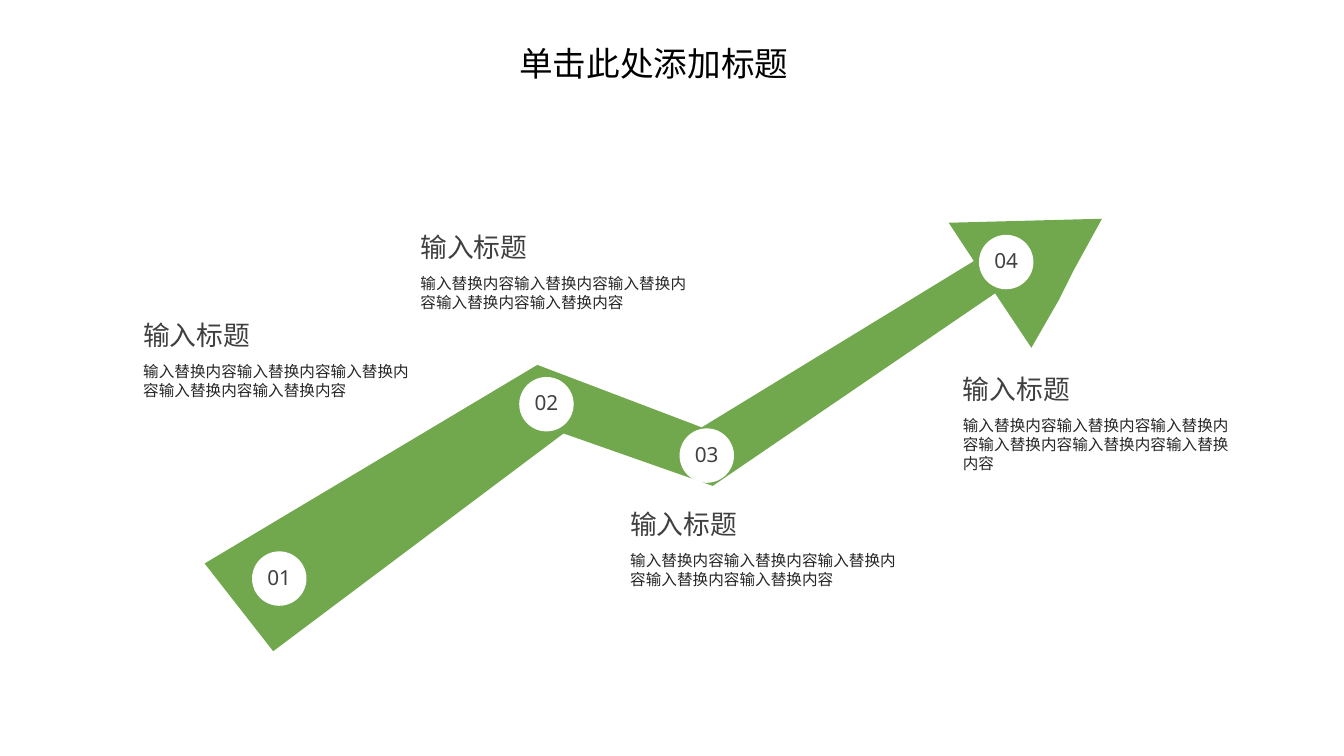
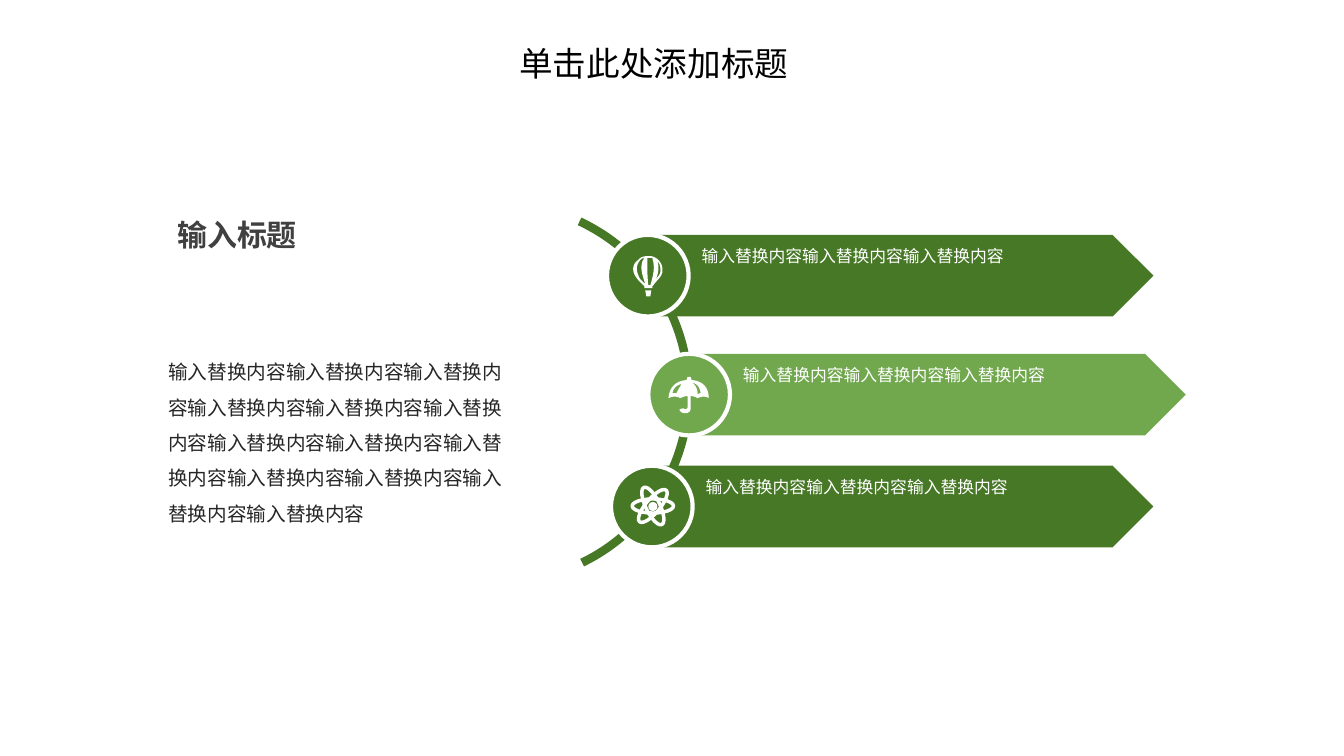
import pptx
import pptx.util
import pptx.dml.color
import pptx.enum.shapes
import pptx.enum.text
from dataclasses import dataclass
from typing import Any, NamedTuple

PX = 9144
KIND = pptx.enum.shapes.MSO_SHAPE
ALIGN = pptx.enum.text.PP_ALIGN
MID = pptx.enum.text.MSO_ANCHOR.MIDDLE
TOP = pptx.enum.text.MSO_ANCHOR.TOP
Path = list[tuple[int, ...]]


@dataclass(frozen=True)
class Theme:
    font: str = "Noto Sans"
    black: str = "000000"
    white: str = "FFFFFF"
    head: str = "404040"
    body: str = "262626"
    dark: str = "477826"
    light: str = "71A84E"
    title_pt: float = 24
    lead_pt: float = 21.4
    head_pt: float = 19.1
    mark_pt: float = 14.8
    text_pt: float = 14
    row_pt: float = 12
    note_pt: float = 11.1


LOOK = Theme()


class Box(NamedTuple):
    left: int
    top: int
    width: int
    height: int


class Style(NamedTuple):
    size: float
    tint: str
    align: Any = ALIGN.LEFT
    anchor: Any = TOP
    pad: tuple[int, int] = (10, 5)
    lead: float = 1.0
    bold: bool = False


@dataclass(frozen=True)
class Note:
    left: int
    top: int
    count: int


@dataclass(frozen=True)
class Row:
    plate: int
    badge: int
    top: int
    tint: str
    icon: list[Path]


TITLE = "单击此处添加标题"
HEAD = "输入标题"
PHRASE = "输入替换内容"

TITLE_STYLE = Style(LOOK.title_pt, LOOK.black, ALIGN.CENTER, MID)
HEAD_STYLE = Style(LOOK.head_pt, LOOK.head, anchor=MID, pad=(0, 5), lead=0.9)
NOTE_STYLE = Style(LOOK.note_pt, LOOK.body, pad=(0, 0))
MARK_STYLE = Style(LOOK.mark_pt, LOOK.head, ALIGN.CENTER, MID, (0, 0), 0.9)
ROW_STYLE = Style(LOOK.row_pt, LOOK.white)
TEXT_STYLE = Style(LOOK.text_pt, LOOK.body, lead=1.5)
LEAD_STYLE = Style(LOOK.lead_pt, LOOK.head, bold=True)

TREND: Path = [
    (941, 221), (966, 259), (696, 424), (533, 362), (203, 559), (271, 646),
    (559, 430), (707, 482), (987, 291), (1023, 345), (1050, 298),
    (1065, 268), (1093, 217),
]
MARKS = [(250, 547), (515, 374), (674, 425), (971, 233)]
NOTES = [Note(142, 317, 5), Note(417, 230, 5), Note(625, 505, 5), Note(955, 371, 6)]

BALLOON: list[Path] = [
    [(643, 254), (647, 254, 650, 255, 653, 258), (655, 260, 657, 263, 657, 267),
     (657, 270), (657, 271, 656, 272, 656, 273), (655, 275, 650, 280, 648, 283),
     (647, 284), (647, 286), (639, 286), (639, 284), (637, 282),
     (633, 278, 628, 273, 628, 267), (628, 263, 630, 260, 633, 258),
     (635, 255, 639, 254, 643, 254)],
    [(646, 288), (645, 294), (641, 294), (640, 288)],
    [(643, 283), (645, 283), (648, 273, 650, 265, 647, 256),
     (646, 256, 644, 256, 643, 256), (642, 256), (642, 265, 642, 274, 643, 283)],
    [(635, 258), (630, 264, 631, 270, 635, 277), (636, 278, 637, 279, 638, 280),
     (640, 282), (638, 275, 633, 264, 639, 256), (637, 256, 636, 257, 635, 258)],
    [(652, 259), (654, 265, 653, 272, 650, 278), (652, 275, 654, 273, 654, 272),
     (655, 271, 655, 270, 655, 267), (655, 264, 654, 261, 652, 259)],
]
BROLLY: list[Path] = [
    [(678, 405), (678, 406, 679, 406, 680, 406), (681, 406, 682, 405, 682, 404),
     (682, 393), (679, 393, 677, 394, 675, 395), (671, 393, 667, 393, 663, 395),
     (664, 384, 670, 378, 681, 377), (682, 374), (685, 374), (686, 377),
     (697, 378, 703, 384, 703, 395), (700, 393, 696, 393, 692, 395),
     (690, 394, 688, 393, 685, 393), (685, 404), (685, 406, 685, 408, 683, 409),
     (682, 410, 681, 410, 680, 410), (676, 410, 674, 408, 674, 406)],
    [(692, 391), (693, 391, 694, 390, 695, 390), (694, 383, 691, 381, 686, 379),
     (690, 382, 692, 386, 692, 391)],
    [(667, 390), (669, 390, 670, 390, 671, 390), (673, 386, 675, 383, 676, 381),
     (671, 382, 668, 385, 667, 390)],
]
ROWS = [
    Row(647, 602, 233, LOOK.dark, BALLOON),
    Row(679, 643, 351, LOOK.light, BROLLY),
    Row(647, 606, 462, LOOK.dark, []),
]


def paint(shape: Any, fill: str = "", line: str = "", width: float = 0) -> Any:
    shape.shadow.inherit = False
    if fill:
        shape.fill.solid()
        shape.fill.fore_color.rgb = pptx.dml.color.RGBColor.from_string(fill)
    else:
        shape.fill.background()
    if line:
        shape.line.color.rgb = pptx.dml.color.RGBColor.from_string(line)
        shape.line.width = pptx.util.Pt(width)
    else:
        shape.line.fill.background()
    return shape


def place(pool: Any, kind: Any, box: Box, fill: str = "", line: str = "", width: float = 0) -> Any:
    return paint(pool.add_shape(kind, *(n * PX for n in box)), fill, line, width)


def write(shape: Any, text: str, style: Style) -> None:
    frame = shape.text_frame
    frame.word_wrap = True
    frame.auto_size = pptx.enum.text.MSO_AUTO_SIZE.NONE
    frame.vertical_anchor = style.anchor
    frame.margin_left = frame.margin_right = style.pad[0] * PX
    frame.margin_top = frame.margin_bottom = style.pad[1] * PX
    frame.text = text
    para = frame.paragraphs[0]
    para.alignment = style.align
    para.line_spacing = style.lead
    para.font.name = LOOK.font
    para.font.size = pptx.util.Pt(style.size)
    para.font.bold = style.bold
    para.font.color.rgb = pptx.dml.color.RGBColor.from_string(style.tint)


def label(pool: Any, box: Box, text: str, style: Style) -> None:
    write(pool.add_textbox(*(n * PX for n in box)), text, style)


def trace(path: Path) -> list[tuple[float, float]]:
    spots: list[tuple[float, float]] = []
    for step in path:
        if len(step) == 2:
            spots.append((step[0] * PX, step[1] * PX))
            continue
        x, y = spots[-1]
        a, b, c, d, e, f = (n * PX for n in step)
        for t in (n / 8 for n in range(1, 9)):
            u = 1 - t
            k = (u ** 3, 3 * u * u * t, 3 * u * t * t, t ** 3)
            spots.append((k[0] * x + k[1] * a + k[2] * c + k[3] * e,
                          k[0] * y + k[1] * b + k[2] * d + k[3] * f))
    return spots


def sketch(pool: Any, paths: list[Path], fill: str) -> None:
    first, *rest = [trace(path) for path in paths]
    pen = pool.build_freeform(*first[0])
    pen.add_line_segments(first[1:], close=True)
    for spots in rest:
        pen.move_to(*spots[0])
        pen.add_line_segments(spots[1:], close=True)
    paint(pen.convert_to_shape(), fill)


def atom(pool: Any, x: int, y: int) -> None:
    for turn in (0, 64, -50):
        ring = place(pool, KIND.OVAL, Box(x - 20, y - 7, 41, 14), "", LOOK.white, 2.5)
        ring.rotation = turn
    place(pool, KIND.OVAL, Box(x - 4, y - 4, 9, 9), LOOK.white)


def start(deck: Any) -> Any:
    slide = deck.slides.add_slide(deck.slide_layouts[5])
    title = slide.shapes.title
    title.left, title.top, title.width, title.height = (n * PX for n in Box(392, 28, 513, 70))
    write(title, TITLE, TITLE_STYLE)
    return slide.shapes


def growth(deck: Any) -> None:
    pool = start(deck)
    sketch(pool, [TREND], LOOK.light)
    for index, (left, top) in enumerate(MARKS, 1):
        disc = place(pool, KIND.OVAL, Box(left, top, 54, 54), LOOK.white)
        write(disc, f"{index:02}", MARK_STYLE)
    for note in NOTES:
        label(pool, Box(note.left, note.top + 42, 275, 37), PHRASE * note.count, NOTE_STYLE)
        label(pool, Box(note.left, note.top, 268, 34), HEAD, HEAD_STYLE)


def points(deck: Any) -> None:
    pool = start(deck)
    curve = place(pool, KIND.ARC, Box(308, 202, 375, 375), "", LOOK.dark, 6)
    curve.adjustments[0], curve.adjustments[1] = 177.02, 38.46
    for row in ROWS:
        group = pool.add_group_shape().shapes
        place(group, KIND.PENTAGON, Box(row.plate, row.top, 497, 81), row.tint)
        place(group, KIND.OVAL, Box(row.badge, row.top, 81, 81), row.tint, LOOK.white, 3)
        if row.icon:
            sketch(group, row.icon, LOOK.white)
        else:
            atom(group, row.badge + 41, row.top + 40)
        label(group, Box(row.badge + 84, row.top + 6, 374, 30), PHRASE * 3, ROW_STYLE)
    label(pool, Box(157, 341, 353, 187), PHRASE * 13, TEXT_STYLE)
    label(pool, Box(166, 210, 258, 46), HEAD, LEAD_STYLE)


def main() -> None:
    deck = pptx.Presentation()
    deck.slide_width, deck.slide_height = 1333 * PX, 750 * PX
    growth(deck)
    points(deck)
    deck.save("out.pptx")


if __name__ == "__main__":
    main()
